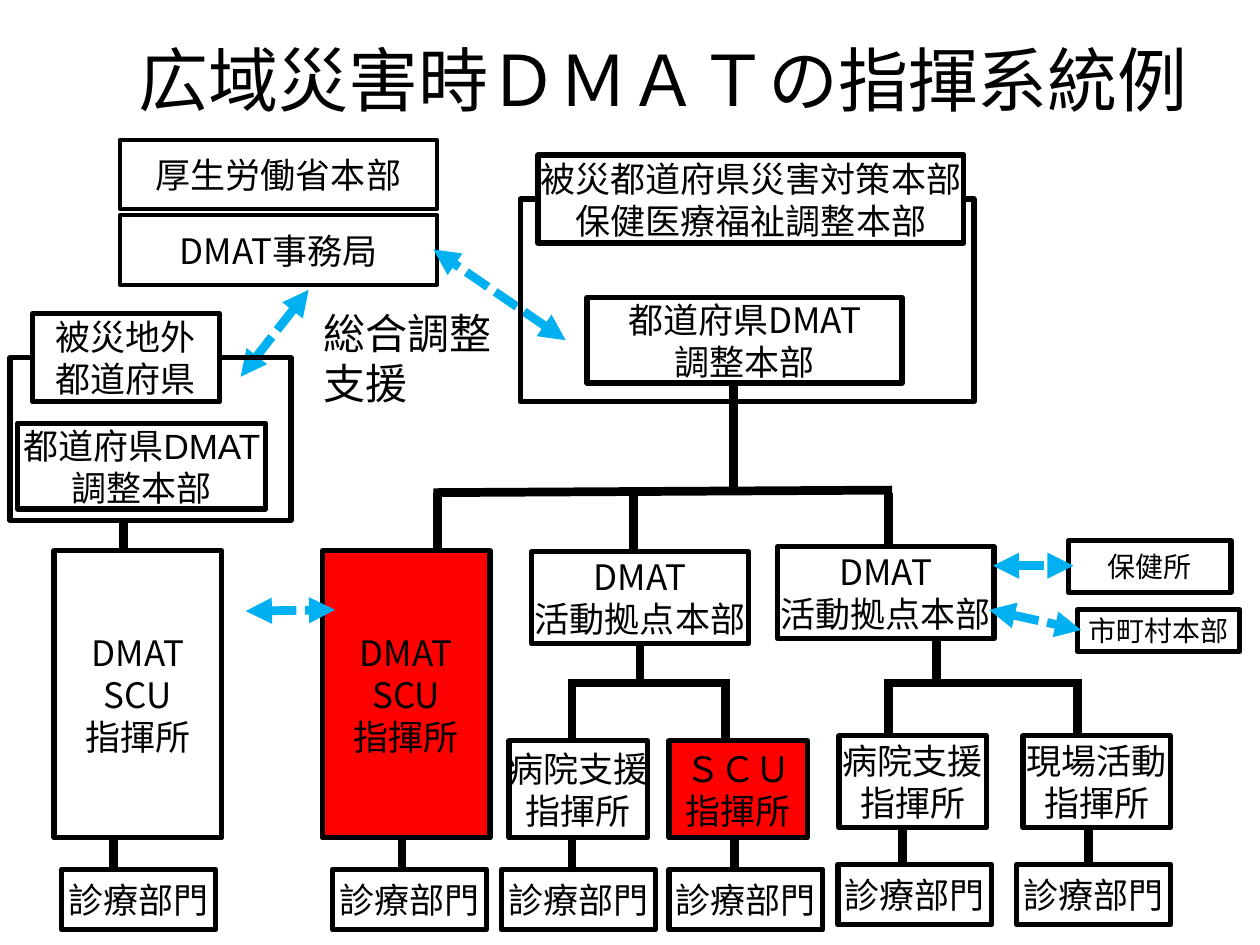
import pptx
import pptx.dml.color
import pptx.enum.dml
import pptx.enum.shapes
import pptx.enum.text
import pptx.oxml
import pptx.oxml.ns
import pptx.util
from pptx.util import Inches

FONT = "Noto Sans CJK JP"
BLACK, WHITE, RED, BLUE = "000000", "FFFFFF", "FF0000", "00B0F0"
CLINIC = "診療部門"
CLINIC_SIZE = (1.22, 0.48)


def color(value):
    return pptx.dml.color.RGBColor.from_string(value)


def add_xml(parent, tag, **attributes):
    element = pptx.oxml.parse_xml(f"<a:{tag} {pptx.oxml.ns.nsdecls('a')}/>")
    for name, value in attributes.items():
        element.set(name, value)
    parent.append(element)


def write(frame, text, size=20, font=FONT, align="CENTER", anchor="MIDDLE", wrap=False):
    """One paragraph for each line of text."""
    frame.word_wrap = wrap
    frame.vertical_anchor = getattr(pptx.enum.text.MSO_ANCHOR, anchor)
    for index, words in enumerate(text.split("\n")):
        paragraph = frame.add_paragraph() if index else frame.paragraphs[0]
        paragraph.alignment = getattr(pptx.enum.text.PP_ALIGN, align)
        run = paragraph.add_run()
        run.text = words
        run.font.size = pptx.util.Pt(size)
        run.font.name = font
        run.font.color.rgb = color(BLACK)
        add_xml(run.font._element, "ea", typeface=FONT)


# Helpers below take offsets from the region's left top corner
def place(area, x, y, width, height):
    return Inches(area[0] + x), Inches(area[1] + y), Inches(width), Inches(height)


def add_label(slide, area, at, text, **text_format):
    label = slide.shapes.add_textbox(*place(area, *at))
    write(label.text_frame, text, **text_format)


def add_box(slide, area, at, text="", fill=WHITE, border=3, **text_format):
    box = slide.shapes.add_shape(pptx.enum.shapes.MSO_SHAPE.RECTANGLE, *place(area, *at))
    box.shadow.inherit = False
    if fill:
        box.fill.solid()
        box.fill.fore_color.rgb = color(fill)
    else:
        box.fill.background()
    box.line.color.rgb = color(BLACK)
    box.line.width = pptx.util.Pt(border)
    if text:
        write(box.text_frame, text, **text_format)


def add_link(slide, area, start, end, line_color=BLACK):
    link = slide.shapes.add_connector(
        pptx.enum.shapes.MSO_CONNECTOR.STRAIGHT,
        Inches(area[0] + start[0]), Inches(area[1] + start[1]),
        Inches(area[0] + end[0]), Inches(area[1] + end[1]))
    link.line.color.rgb = color(line_color)
    link.line.width = pptx.util.Pt(5)
    add_xml(link._element.spPr, "effectLst")
    return link


def add_exchange(slide, area, start, end):
    """Dashed blue arrow pointing both ways."""
    line = add_link(slide, area, start, end, BLUE).line
    line.dash_style = pptx.enum.dml.MSO_LINE.SQUARE_DOT
    for tag in ("headEnd", "tailEnd"):
        add_xml(line._get_or_add_ln(), tag, type="triangle")


def national_office(slide, area):
    for y, name in ((0, "厚生労働省本部"), (0.6, "DMAT事務局")):
        add_box(slide, area, (0, y, 2.52, 0.55), name, border=2.25)
    add_label(slide, area, (1.52, 1.28, 1.55, 0.91), "総合調整\n支援",
              size=24, align="LEFT", anchor="TOP")
    # Support to both prefectures
    add_exchange(slide, area, (3.54, 1.59), (2.49, 0.87))
    add_exchange(slide, area, (0.96, 1.88), (1.5, 1.19))


def affected_prefecture(slide, area):
    add_link(slide, area, (1.69, 1.82), (1.69, 2.67))
    add_box(slide, area, (0.53, 1.13, 2.5, 0.68), "都道府県DMAT\n調整本部")
    add_box(slide, area, (0, 0.35, 3.6, 1.61), fill=None)
    add_box(slide, area, (0.14, 0, 3.38, 0.7), "被災都道府県災害対策本部\n保健医療福祉調整本部")


def outside_prefecture(slide, area):
    add_box(slide, area, (0.06, 0.87, 1.97, 0.68), "都道府県DMAT\n調整本部", font="Arial")
    add_box(slide, area, (0, 0.35, 2.23, 1.29), fill=None)
    add_box(slide, area, (0.18, 0, 1.48, 0.7), "被災地外\n都道府県", font="Arial")


def command_branches(slide, area):
    add_link(slide, area, (0, 0.01), (3.64, -0.01))
    for x in (0.03, 1.59, 3.61):
        add_link(slide, area, (x, 0.01), (x, 0.46))


def scu_post(slide, area, fill, clinic_x, link_x):
    add_link(slide, area, (link_x, 2.06), (link_x, 2.53))
    add_box(slide, area, (0, 0, 1.33, 2.28), "DMAT\nSCU\n指揮所", fill)
    add_box(slide, area, (clinic_x, 2.53, *CLINIC_SIZE), CLINIC, fill=None)


def activity_base(slide, area, trunk_x, bar_y, unit_size, units):
    """A base, its command posts and the clinic under each post."""
    add_link(slide, area, (trunk_x, 0.72), (trunk_x, bar_y))
    add_link(slide, area, (units[0][3], bar_y), (units[-1][3], bar_y))
    add_box(slide, area, (0, 0, 1.72, 0.73), "DMAT\n活動拠点本部", fill=None)
    for name, fill, unit_x, drop_x, clinic_x, link_x in units:
        add_link(slide, area, (drop_x, bar_y - 0.03), (drop_x, 1.5))
        add_link(slide, area, (link_x, 1.5 + unit_size[1]), (link_x, 2.52))
        add_box(slide, area, (unit_x, 1.5, *unit_size), f"{name}\n指揮所", fill)
        add_box(slide, area, (clinic_x, 2.52, *CLINIC_SIZE), CLINIC, fill=None)


def local_partners(slide, area):
    add_box(slide, area, (0.6, 0, 1.29, 0.41), "保健所", size=16)
    add_box(slide, area, (0.67, 0.55, 1.29, 0.33), "市町村本部", size=16)
    add_exchange(slide, area, (0, 0.2), (0.64, 0.2))
    add_exchange(slide, area, (-0.03, 0.55), (0.7, 0.71))


def main():
    deck = pptx.Presentation()
    deck.slide_width, deck.slide_height = Inches(10), Inches(7.5)
    slide = deck.slides.add_slide(deck.slide_layouts[6])
    page = (0, 0)

    add_label(slide, page, (0.53, 0.23, 9.47, 0.79), "広域災害時ＤＭＡＴの指揮系統例",
              size=40, font="Calibri", wrap=True)
    national_office(slide, (0.95, 1.11))
    affected_prefecture(slide, (4.13, 1.23))
    outside_prefecture(slide, (0.08, 2.49))
    add_link(slide, page, (0.98, 4.12), (0.98, 4.36))
    command_branches(slide, (3.44, 3.9))

    # SCU posts outside and inside the affected area
    scu_post(slide, (0.43, 4.37), WHITE, clinic_x=0.06, link_x=0.47)
    scu_post(slide, (2.56, 4.37), RED, clinic_x=0.08, link_x=0.63)
    add_exchange(slide, page, (1.95, 4.85), (2.66, 4.84))

    # Units: name, fill, post x, drop x, clinic x, clinic link x
    activity_base(slide, (4.22, 4.38), 0.86, 1.04, (1.1, 0.77), (
        ("病院支援", None, -0.18, 0.32, -0.24, 0.32),
        ("ＳＣＵ", RED, 1.09, 1.54, 1.09, 1.61)))
    activity_base(slide, (6.17, 4.34), 1.26, 1.08, (1.17, 0.73), (
        ("病院支援", None, 0.49, 0.88, 0.48, 0.99),
        ("現場活動", WHITE, 1.95, 2.38, 1.9, 2.47)))
    local_partners(slide, (7.88, 4.29))

    deck.save("out.pptx")


if __name__ == "__main__":
    main()
